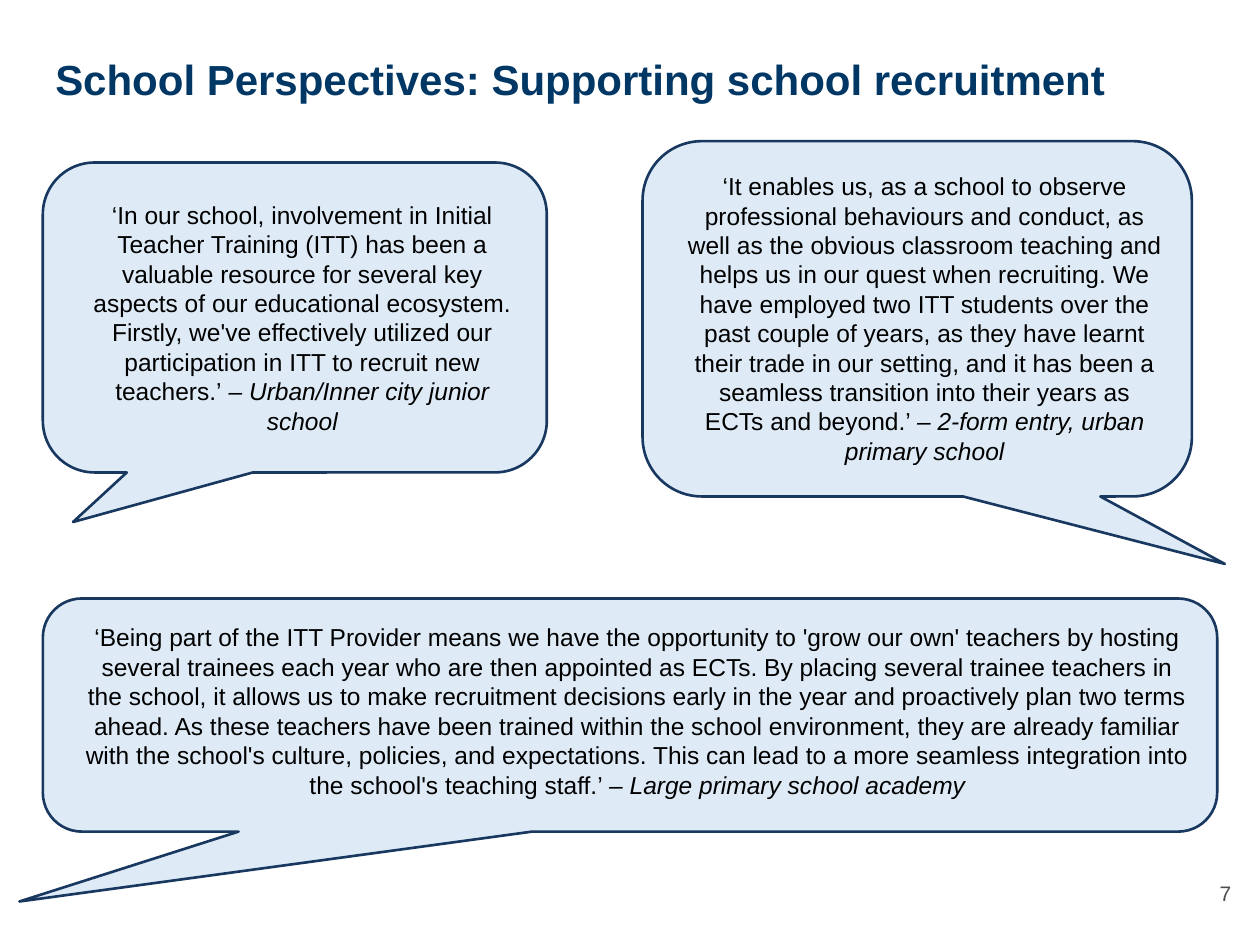
from pptx import Presentation
from pptx.dml.color import RGBColor
from pptx.enum.shapes import MSO_SHAPE
from pptx.enum.text import MSO_ANCHOR, PP_ALIGN
from pptx.util import Inches, Pt

CALLOUT = MSO_SHAPE.ROUNDED_RECTANGULAR_CALLOUT
TOP, MIDDLE = MSO_ANCHOR.TOP, MSO_ANCHOR.MIDDLE
LEFT, CENTER, RIGHT = PP_ALIGN.LEFT, PP_ALIGN.CENTER, PP_ALIGN.RIGHT

NAVY = RGBColor(0x00, 0x37, 0x64)
OUTLINE = RGBColor(0x18, 0x38, 0x60)
PALE_BLUE = RGBColor(0xDE, 0xEB, 0xF7)
BLACK = RGBColor(0x00, 0x00, 0x00)
GREY = RGBColor(0x4D, 0x4D, 0x4D)

FONT = "Arial"
MARGIN = 0.34
FULL_WIDTH = 10 - 2 * MARGIN
CORNER = 0.167

# Content
TITLE = "School Perspectives: Supporting school recruitment"
PAGE_NUMBER = "7"
QUOTES = [
    {
        "quote": "‘In our school, involvement in Initial Teacher Training (ITT) has been a "
                 "valuable resource for several key aspects of our educational ecosystem. "
                 "Firstly, we've effectively utilized our participation in ITT to recruit "
                 "new teachers.’",
        "school": " – Urban/Inner city junior school",
        "box": (MARGIN, 1.29, 4, 2.46), "tip": (-0.44, 0.66), "anchor": MIDDLE,
    },
    {
        "quote": "‘It enables us, as a school to observe professional behaviours and "
                 "conduct, as well as the obvious classroom teaching and helps us in our "
                 "quest when recruiting. We have employed two ITT students over the past "
                 "couple of years, as they have learnt their trade in our setting, and it "
                 "has been a seamless transition into their years as ECTs and beyond.’ ",
        "school": "– 2-form entry, urban primary school",
        "box": (5.1, 1.12, 4.36, 2.82), "tip": (0.56, 0.69), "anchor": TOP,
    },
    {
        "quote": "‘Being part of the ITT Provider means we have the opportunity to 'grow "
                 "our own' teachers by hosting several trainees each year who are then "
                 "appointed as ECTs. By placing several trainee teachers in the school, it "
                 "allows us to make recruitment decisions early in the year and proactively "
                 "plan two terms ahead. As these teachers have been trained within the "
                 "school environment, they are already familiar with the school's culture, "
                 "policies, and expectations. This can lead to a more seamless integration "
                 "into the school's teaching staff.’ ",
        "school": "– Large primary school academy",
        "box": (MARGIN, 4.75, FULL_WIDTH, 1.85), "tip": (-0.52, 0.8), "anchor": TOP,
    },
]


def write(shape, text, *, size, color, source="", bold=False, align=LEFT,
          anchor=TOP, indent=0, line_spacing=None):
    """Fill a shape with one paragraph, ending with an optional italic source."""
    frame = shape.text_frame
    frame.word_wrap = True
    frame.vertical_anchor = anchor
    frame.margin_left = frame.margin_right = Inches(0.1)
    frame.margin_top = frame.margin_bottom = Inches(0.1)
    paragraph = frame.paragraphs[0]
    paragraph.alignment = align
    paragraph.line_spacing = line_spacing
    if indent:
        properties = paragraph._p.get_or_add_pPr()
        properties.set("marL", str(Inches(indent)))
        properties.set("indent", "0")
    for words, italic in ((text, False), (source, True)):
        if words:
            run = paragraph.add_run()
            run.text = words
            run.font.name = FONT
            run.font.size = Pt(size)
            run.font.bold = bold
            run.font.italic = italic
            run.font.color.rgb = color


def add_quote(slide, quote, school, box, tip, anchor):
    bubble = slide.shapes.add_shape(CALLOUT, *map(Inches, box))
    bubble.shadow.inherit = False
    for index, value in enumerate((*tip, CORNER)):
        bubble.adjustments[index] = value
    bubble.fill.solid()
    bubble.fill.fore_color.rgb = PALE_BLUE
    bubble.line.color.rgb = OUTLINE
    bubble.line.width = Pt(1.5)
    write(bubble, quote, source=school, size=14, color=BLACK, align=CENTER,
          anchor=anchor, indent=0.12)


def main():
    deck = Presentation()
    deck.slide_width, deck.slide_height = Inches(10), Inches(7.5)
    slide = deck.slides.add_slide(deck.slide_layouts[6])

    # Title
    title = slide.shapes.add_textbox(*map(Inches, (MARGIN, 0.37, FULL_WIDTH, 0.84)))
    write(title, TITLE, size=24, color=NAVY, bold=True, line_spacing=0.9)

    # Speech bubbles
    for entry in QUOTES:
        add_quote(slide, **entry)

    # Page number
    number = slide.shapes.add_textbox(*map(Inches, (9.27, 6.8, 0.6, 0.57)))
    write(number, PAGE_NUMBER, size=12, color=GREY, align=RIGHT, anchor=MIDDLE)

    deck.save("out.pptx")


if __name__ == "__main__":
    main()
